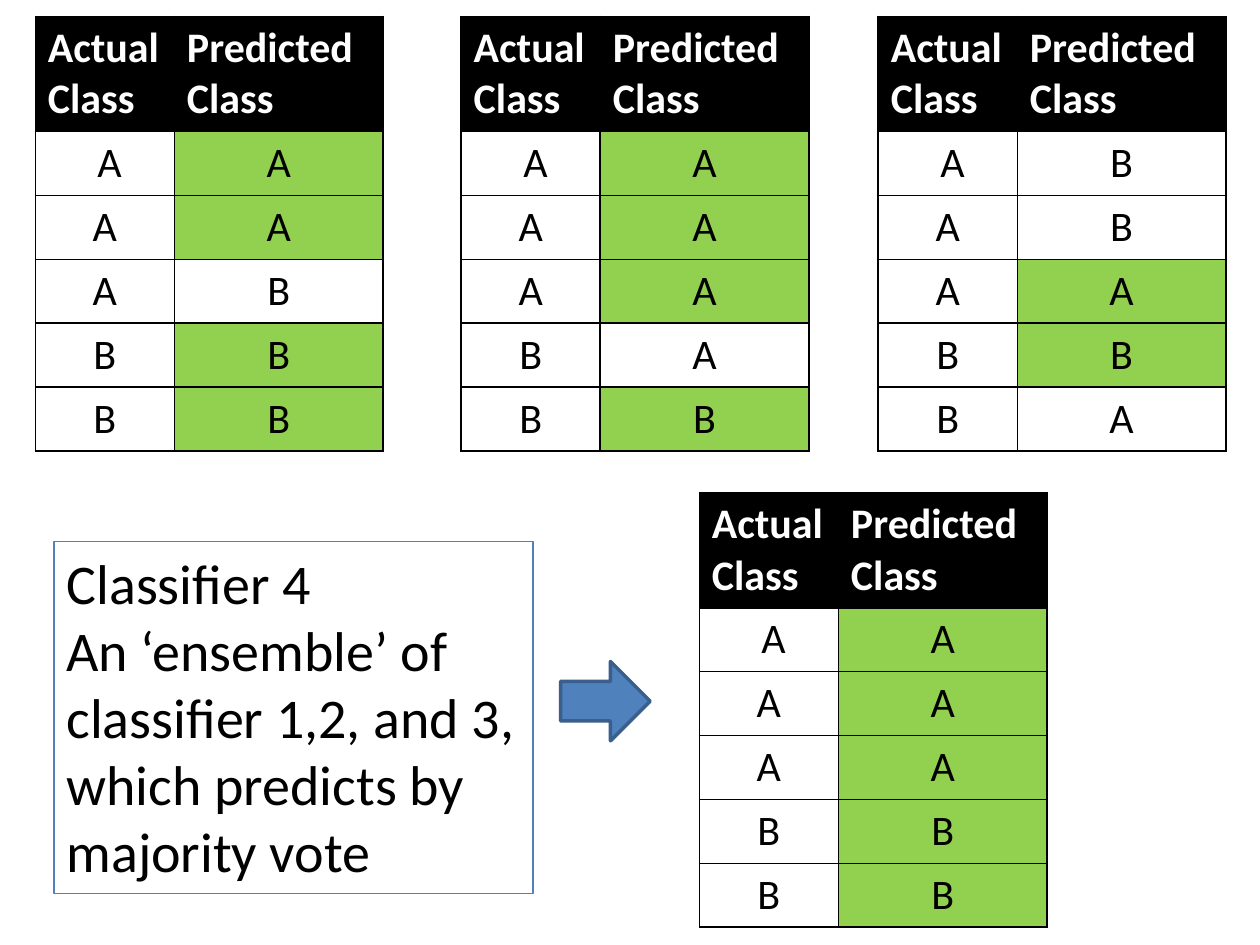
from collections import namedtuple
from dataclasses import dataclass

from lxml import etree
from pptx import Presentation
from pptx.dml.color import RGBColor
from pptx.enum import shapes, text
from pptx.oxml import ns
from pptx.util import Inches, Pt

COLUMNS, ROWS = 100, 75
Box = namedtuple("Box", "left top width height")


@dataclass(frozen=True)
class Theme:
    font: str = "Calibri"
    table_size: int = 24
    note_size: int = 32
    ink: str = "000000"
    paper: str = "FFFFFF"
    correct: str = "92D050"
    accent: str = "4F81BD"
    accent_edge: str = "3A5F8C"
    rule: float = 1
    note_rule: float = 0.75
    arrow_rule: float = 2


THEME = Theme()
HEADINGS = ("Actual Class", "Predicted Class")
ACTUAL = (" A", "A", "A", "B", "B")
PREDICTIONS = ("AABBB", "AAAAB", "BBABA")
NOTE = (
    "Classifier 4",
    "An ‘ensemble’ of",
    "classifier 1,2, and 3,",
    "which predicts by",
    "majority vote",
)


def grid_box(deck, column, row, columns, rows):
    cell_width, cell_height = deck.slide_width / COLUMNS, deck.slide_height / ROWS
    return Box(
        int(column * cell_width),
        int(row * cell_height),
        int(columns * cell_width),
        int(rows * cell_height),
    )


def add_span(para, words, size, color, bold=False):
    span = para.add_run()
    span.text = words
    span.font.name = THEME.font
    span.font.size = Pt(size)
    span.font.bold = bold
    span.font.color.rgb = RGBColor.from_string(color)


def paint(shape, fill, line, width):
    shape.shadow.inherit = False
    if fill:
        shape.fill.solid()
        shape.fill.fore_color.rgb = RGBColor.from_string(fill)
    else:
        shape.fill.background()
    shape.line.color.rgb = RGBColor.from_string(line)
    shape.line.width = Pt(width)


def rule_cell(cell):
    properties = cell._tc.get_or_add_tcPr()
    for position, side in enumerate(("lnL", "lnR", "lnT", "lnB")):
        line = etree.Element(ns.qn(f"a:{side}"), w=str(Pt(THEME.rule)))
        fill = etree.SubElement(line, ns.qn("a:solidFill"))
        etree.SubElement(fill, ns.qn("a:srgbClr"), val=THEME.ink)
        properties.insert(position, line)


def fill_cell(cell, words, fill, color, bold=False, align=None):
    cell.fill.solid()
    cell.fill.fore_color.rgb = RGBColor.from_string(fill)
    para = cell.text_frame.paragraphs[0]
    para.alignment = align
    add_span(para, words, THEME.table_size, color, bold)
    rule_cell(cell)


def result_table(page, box, predicted):
    table = page.shapes.add_table(len(ACTUAL) + 1, len(HEADINGS), *box).table
    table.horz_banding = False
    for column, share in zip(table.columns, (0.4, 0.6)):
        column.width = int(box.width * share)
    header_height = int(box.height * 9 / 34)
    for number, row in enumerate(table.rows):
        row.height = (box.height - header_height) // len(ACTUAL) if number else header_height
    for column, heading in enumerate(HEADINGS):
        fill_cell(table.cell(0, column), heading, THEME.ink, THEME.paper, bold=True)
    for row, (actual, guess) in enumerate(zip(ACTUAL, predicted), 1):
        match = THEME.correct if actual.strip() == guess else THEME.paper
        for column, (words, fill) in enumerate(((actual, THEME.paper), (guess, match))):
            fill_cell(table.cell(row, column), words, fill, THEME.ink,
                      align=text.PP_ALIGN.CENTER)


def ensemble_note(page, box):
    note = page.shapes.add_textbox(*box)
    paint(note, None, THEME.accent, THEME.note_rule)
    frame = note.text_frame
    frame.word_wrap = False
    frame.auto_size = text.MSO_AUTO_SIZE.SHAPE_TO_FIT_TEXT
    for number, words in enumerate(NOTE):
        para = frame.add_paragraph() if number else frame.paragraphs[0]
        add_span(para, words, THEME.note_size, THEME.ink)


def result_arrow(page, box):
    arrow = page.shapes.add_shape(shapes.MSO_SHAPE.RIGHT_ARROW, *box)
    paint(arrow, THEME.accent, THEME.accent_edge, THEME.arrow_rule)


def majority_vote(ballots):
    return "".join(max("AB", key=votes.count) for votes in zip(*ballots))


def main():
    deck = Presentation()
    deck.slide_width, deck.slide_height = Inches(10), Inches(7.5)
    page = deck.slides.add_slide(deck.slide_layouts[6])
    for column, predicted in zip((2.8, 36.6, 69.7), PREDICTIONS):
        result_table(page, grid_box(deck, column, 1.3, 27.6, 34), predicted)
    result_table(page, grid_box(deck, 55.5, 39.1, 27.6, 34), majority_vote(PREDICTIONS))
    ensemble_note(page, grid_box(deck, 4.3, 43, 38, 27.9))
    result_arrow(page, grid_box(deck, 44.5, 52.5, 7.1, 6.3))
    deck.save("out.pptx")


if __name__ == "__main__":
    main()
